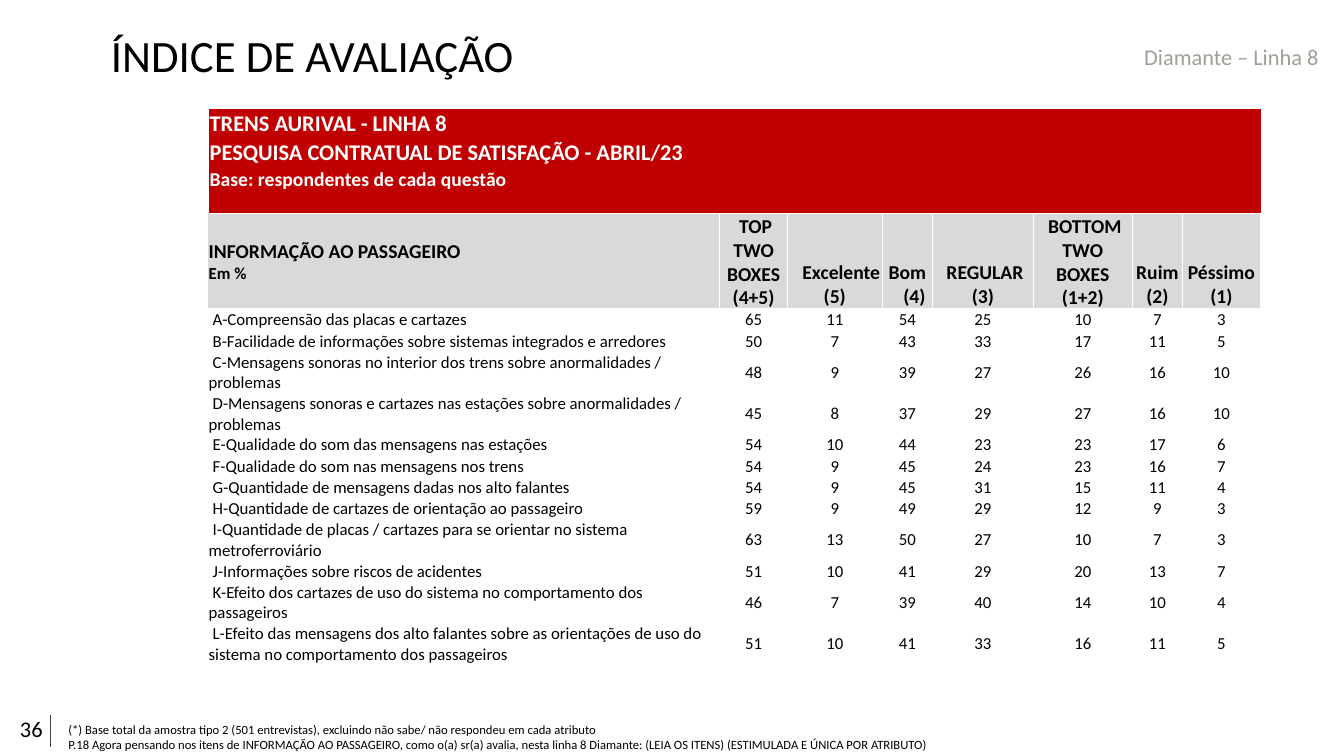
from lxml import etree
from pptx import Presentation
from pptx.dml.color import RGBColor
from pptx.enum.shapes import MSO_CONNECTOR
from pptx.enum.text import MSO_ANCHOR, MSO_AUTO_SIZE, PP_ALIGN
from pptx.oxml.ns import qn
from pptx.util import Pt

EMU_PER_PX = 9144
FONT = "Calibri"
BLACK, WHITE, RED = "000000", "FFFFFF", "C00000"
HEADER_GRAY, RULE_GRAY, LINE_NAME_GRAY = "D9D9D9", "404040", "9F9F95"
NO_STYLE = "{2D5ABB26-0587-4C30-8999-92F81FD0307C}"

BANNER_COLUMNS = [505, 67, 84, 40, 85, 67, 54, 142]
BANNER_ROWS = [29, 29, 21, 21]
BANNER_LINES = [
    ("TRENS AURIVAL - LINHA 8", 16),
    ("PESQUISA CONTRATUAL DE SATISFAÇÃO - ABRIL/23", 16),
    ("Base: respondentes de cada questão", 14),
]

RATING_COLUMNS = [508, 67, 94, 50, 100, 98, 50, 77]
RATING_HEADERS = [
    ("TOP TWO BOXES (4+5)", 0, 4),
    ("Excelente (5)", 0, 13),
    ("Bom (4)", 14, -14),
    ("REGULAR (3)", 0, 4),
    ("BOTTOM TWO BOXES (1+2)", 0, 4),
    ("Ruim (2)", 0, 0),
    ("Péssimo (1)", 0, 0),
]
RATINGS = [
    ("A-Compreensão das placas e cartazes", 65, 11, 54, 25, 10, 7, 3),
    ("B-Facilidade de informações sobre sistemas integrados e arredores", 50, 7, 43, 33, 17, 11, 5),
    ("C-Mensagens sonoras no interior dos trens sobre anormalidades / problemas", 48, 9, 39, 27, 26, 16, 10),
    ("D-Mensagens sonoras e cartazes nas estações sobre anormalidades / problemas", 45, 8, 37, 29, 27, 16, 10),
    ("E-Qualidade do som das mensagens nas estações", 54, 10, 44, 23, 23, 17, 6),
    ("F-Qualidade do som nas mensagens nos trens", 54, 9, 45, 24, 23, 16, 7),
    ("G-Quantidade de mensagens dadas nos alto falantes", 54, 9, 45, 31, 15, 11, 4),
    ("H-Quantidade de cartazes de orientação ao passageiro", 59, 9, 49, 29, 12, 9, 3),
    ("I-Quantidade de placas / cartazes para se orientar no sistema metroferroviário", 63, 13, 50, 27, 10, 7, 3),
    ("J-Informações sobre riscos de acidentes", 51, 10, 41, 29, 20, 13, 7),
    ("K-Efeito dos cartazes de uso do sistema no comportamento dos passageiros", 46, 7, 39, 40, 14, 10, 4),
    ("L-Efeito das mensagens dos alto falantes sobre as orientações de uso do sistema "
     "no comportamento dos passageiros", 51, 10, 41, 33, 16, 11, 5),
]
FOOTNOTES = [
    "(*) Base total da amostra tipo 2 (501 entrevistas), excluindo não sabe/ não respondeu em cada atributo",
    "P.18 Agora pensando nos itens de INFORMAÇÃO AO PASSAGEIRO, como o(a) sr(a) avalia, nesta linha 8 "
    "Diamante: (LEIA OS ITENS) (ESTIMULADA E ÚNICA POR ATRIBUTO)",
]


def px(length):
    """Turn whole pixels into EMU."""
    return length * EMU_PER_PX


def color(hex_string):
    """Turn a hex string into a colour."""
    return RGBColor.from_string(hex_string)


def add_run(paragraph, text, size, hex_color=BLACK, bold=False):
    """Append one formatted run to a paragraph."""
    run = paragraph.add_run()
    run.text = text
    run.font.name, run.font.size, run.font.bold = FONT, Pt(size), bold
    run.font.color.rgb = color(hex_color)


def add_text(slide, box, lines, size, hex_color=BLACK, wrap=True, insets=(10, 5, 10, 5)):
    """Place a text box with one paragraph for each line."""
    frame = slide.shapes.add_textbox(*map(px, box)).text_frame
    frame.word_wrap = wrap
    frame.auto_size = MSO_AUTO_SIZE.SHAPE_TO_FIT_TEXT
    frame.margin_left, frame.margin_top, frame.margin_right, frame.margin_bottom = map(px, insets)
    for index, line in enumerate(lines):
        paragraph = frame.add_paragraph() if index else frame.paragraphs[0]
        add_run(paragraph, line, size, hex_color)


def add_plain_table(slide, box, columns, rows):
    """Place an unstyled table with the given column widths and row heights."""
    frame = slide.shapes.add_table(len(rows), len(columns), *map(px, box))
    table = frame.table
    table.first_row = table.horz_banding = False
    table._tbl.tblPr.find(qn("a:tableStyleId")).text = NO_STYLE
    for column, width in zip(table.columns, columns):
        column.width = px(width)
    for row, height in zip(table.rows, rows):
        row.height = px(height)
    frame.height = px(box[3])
    return table


def prepare_cell(cell, fill=None, anchor=MSO_ANCHOR.MIDDLE, align=PP_ALIGN.LEFT):
    """Set a cell's margins, anchor, fill and alignment and return its paragraph."""
    cell.margin_left = cell.margin_top = cell.margin_right = px(1)
    cell.margin_bottom = 0
    cell.vertical_anchor = anchor
    if fill:
        cell.fill.solid()
        cell.fill.fore_color.rgb = color(fill)
    else:
        cell.fill.background()
    paragraph = cell.text_frame.paragraphs[0]
    paragraph.alignment = align
    return paragraph


def add_borders(cell, hex_color, points):
    """Draw a solid line on the four sides of a cell."""
    properties = cell._tc.get_or_add_tcPr()
    for position, side in enumerate(("a:lnL", "a:lnR", "a:lnT", "a:lnB")):
        line = etree.Element(qn(side), w=str(Pt(points)))
        fill = etree.SubElement(line, qn("a:solidFill"))
        etree.SubElement(fill, qn("a:srgbClr"), val=hex_color)
        properties.insert(position, line)


def indent(paragraph, left, first_line):
    """Set a paragraph's left margin and first-line indent."""
    properties = paragraph._p.get_or_add_pPr()
    properties.set("marL", str(px(left)))
    properties.set("indent", str(px(first_line)))


def add_banner(slide, box):
    """Place the red banner table with the survey title."""
    table = add_plain_table(slide, box, BANNER_COLUMNS, BANNER_ROWS)
    for cell in table.iter_cells():
        paragraph = prepare_cell(cell, RED)
        etree.SubElement(paragraph._p, qn("a:endParaRPr"), sz="1000")
    table.cell(1, 0).merge(table.cell(1, 1))
    for row, (text, size) in enumerate(BANNER_LINES):
        add_run(table.cell(row, 0).text_frame.paragraphs[0], text, size, WHITE, True)


def add_ratings(slide, box):
    """Place the table of ratings in percent."""
    table = add_plain_table(slide, box, RATING_COLUMNS, [64] + [21] * len(RATINGS))
    for cell in table.iter_cells():
        add_borders(cell, WHITE, 1)
    heading = prepare_cell(table.cell(0, 0), HEADER_GRAY)
    add_run(heading, "INFORMAÇÃO AO PASSAGEIRO", 14, bold=True)
    heading.add_line_break()
    add_run(heading, "Em %", 12, bold=True)
    for column, (text, left, first_line) in enumerate(RATING_HEADERS, 1):
        paragraph = prepare_cell(table.cell(0, column), HEADER_GRAY, MSO_ANCHOR.BOTTOM, PP_ALIGN.CENTER)
        indent(paragraph, left, first_line)
        add_run(paragraph, text, 14, bold=True)
    for row, (question, *values) in enumerate(RATINGS, 1):
        paragraph = prepare_cell(table.cell(row, 0))
        indent(paragraph, 0, 4)
        add_run(paragraph, question, 12)
        for column, value in enumerate(values, 1):
            add_run(prepare_cell(table.cell(row, column), align=PP_ALIGN.CENTER), str(value), 12)


def add_page_mark(slide, box):
    """Place the page number and the thin rule beside it."""
    left, top, width, height = box
    add_text(slide, box, ["36"], 16, wrap=False)
    rule = slide.shapes.add_connector(
        MSO_CONNECTOR.STRAIGHT, px(left + 40), px(top + 4), px(left + 40), px(top + height - 1))
    rule.line.color.rgb = color(RULE_GRAY)
    rule.line.width = Pt(0.5)
    etree.SubElement(rule._element.spPr, qn("a:effectLst"))


def build_rating_slide(presentation):
    """Add the slide and place its regions."""
    slide = presentation.slides.add_slide(presentation.slide_layouts[6])
    add_page_mark(slide, (10, 705, 56, 37))
    add_text(slide, (1125, 38, 195, 37), ["Diamante – Linha 8"], 16, LINE_NAME_GRAY, wrap=False)
    add_banner(slide, (207, 108, 1043, 104))
    add_ratings(slide, (206, 212, 1044, 447))
    add_text(slide, (58, 711, 1033, 40), FOOTNOTES, 9)
    add_text(slide, (109, 25, 999, 55), ["ÍNDICE DE AVALIAÇÃO"], 32, insets=(1, 2, 0, 0))


def main():
    """Build and save the presentation."""
    presentation = Presentation()
    presentation.slide_width, presentation.slide_height = px(1333), px(750)
    build_rating_slide(presentation)
    presentation.save("out.pptx")


if __name__ == "__main__":
    main()
